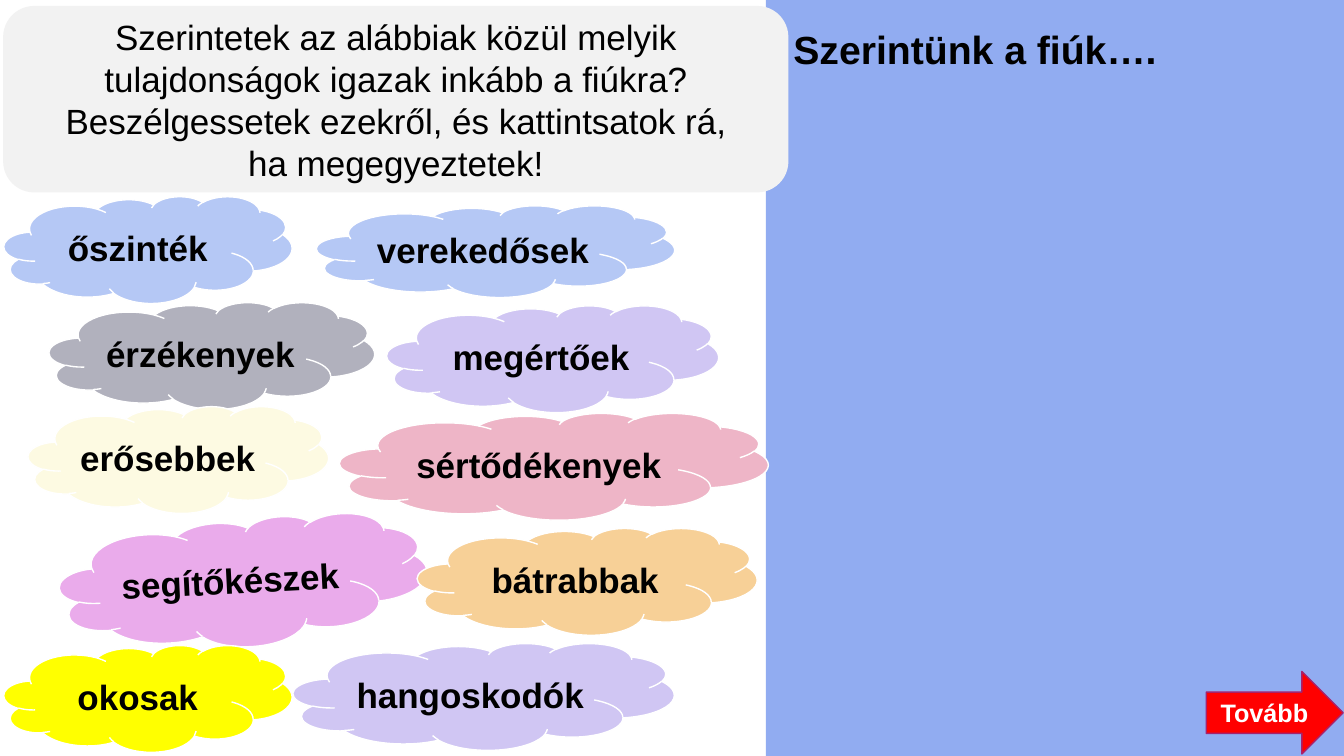
"""Build a Hungarian classroom slide with clouds of traits to discuss about boys."""
from dataclasses import dataclass

from pptx import Presentation
from pptx.dml.color import RGBColor
from pptx.enum.shapes import MSO_SHAPE
from pptx.enum.text import MSO_ANCHOR, MSO_AUTO_SIZE, PP_ALIGN
from pptx.util import Cm, Pt

RECTANGLE = MSO_SHAPE.RECTANGLE
ROUNDED = MSO_SHAPE.ROUNDED_RECTANGLE
CLOUD = MSO_SHAPE.CLOUD
ARROW = MSO_SHAPE.RIGHT_ARROW
TOP, MIDDLE = MSO_ANCHOR.TOP, MSO_ANCHOR.MIDDLE
LEFT, CENTER = PP_ALIGN.LEFT, PP_ALIGN.CENTER
FIXED = MSO_AUTO_SIZE.NONE


@dataclass(frozen=True)
class Theme:
    font: str = "Arial"
    title_size: int = 28
    body_size: int = 25
    button_size: int = 18
    black: str = "000000"
    white: str = "FFFFFF"
    panel: str = "91ACF1"
    question: str = "F2F2F2"
    blue: str = "B5C8F5"
    lilac: str = "D0C6F3"
    grey: str = "B1B1BD"
    cream: str = "FDFAE2"
    orange: str = "F7D097"
    rose: str = "EEB5C7"
    pink: str = "EAABEB"
    yellow: str = "FFFF00"
    red: str = "FF0000"
    plum: str = "A8216B"


theme = Theme()


def add_block(kind, left, top, width, height, fill, line=None):
    block = page.shapes.add_shape(kind, Cm(left), Cm(top), Cm(width), Cm(height))
    block.shadow.inherit = False
    block.fill.solid()
    block.fill.fore_color.rgb = RGBColor.from_string(fill)
    if line:
        block.line.color.rgb = RGBColor.from_string(line)
        block.line.width = Pt(1)
    else:
        block.line.fill.background()
    return block


def write(box, text, size, color=theme.black, bold=True, align=CENTER, anchor=MIDDLE, wrap=False):
    frame = box.text_frame
    frame.text = text
    frame.auto_size = FIXED
    frame.word_wrap = wrap
    frame.vertical_anchor = anchor
    para = frame.paragraphs[0]
    para.alignment = align
    for span in para.runs:
        span.font.name = theme.font
        span.font.size = Pt(size)
        span.font.bold = bold
        span.font.color.rgb = RGBColor.from_string(color)


deck = Presentation()
deck.slide_width, deck.slide_height = Cm(33.87), Cm(19.05)
page = deck.slides.add_slide(deck.slide_layouts.get_by_name("Title Only"))

title = page.shapes.title
title.left, title.top, title.width, title.height = Cm(19.74), Cm(0.51), Cm(11.84), Cm(1.45)
write(title, "Szerintünk a fiúk….", theme.title_size, align=LEFT, anchor=TOP, wrap=True)

panel = add_block(RECTANGLE, 19.3, 0, 14.57, 19.05, theme.panel)
title.element.addprevious(panel.element)

clouds = [
    ("segítőkészek", 1.5, 13.06, 9.27, 3.23, theme.pink, -2.9),
    ("őszinték", 0.1, 4.95, 7.26, 2.69, theme.blue, 0),
    ("verekedősek", 7.98, 5.18, 9.02, 2.31, theme.blue, 0),
    ("hangoskodók", 7.39, 16.21, 9.6, 2.69, theme.lilac, 0),
    ("érzékenyek", 1.24, 7.62, 8.2, 2.69, theme.grey, 0),
    ("erősebbek", 0.71, 10.24, 7.57, 2.69, theme.cream, 0),
    ("bátrabbak", 10.52, 13.31, 8.56, 2.69, theme.orange, 0),
    ("sértődékenyek", 8.56, 10.41, 10.8, 2.69, theme.rose, 0),
    ("okosak", 0.1, 16.26, 7.26, 2.69, theme.yellow, 0),
    ("megértőek", 9.75, 7.7, 8.36, 2.69, theme.lilac, 0),
]
for trait, left, top, width, height, fill, angle in clouds:
    cloud = add_block(CLOUD, left, top, width, height, fill, theme.white)
    cloud.rotation = angle
    write(cloud, trait, theme.body_size)

button = add_block(ARROW, 30.4, 16.92, 3.45, 2.08, theme.red, theme.plum)
write(button, "Tovább", theme.button_size, color=theme.white)

question = add_block(ROUNDED, 0.08, 0.15, 19.79, 4.7, theme.question)
write(
    question,
    "Szerintetek az alábbiak közül melyik tulajdonságok igazak inkább a fiúkra? "
    "Beszélgessetek ezekről, és kattintsatok rá,\vha megegyeztetek!",
    theme.body_size,
    bold=False,
    wrap=True,
)

deck.save("out.pptx")
